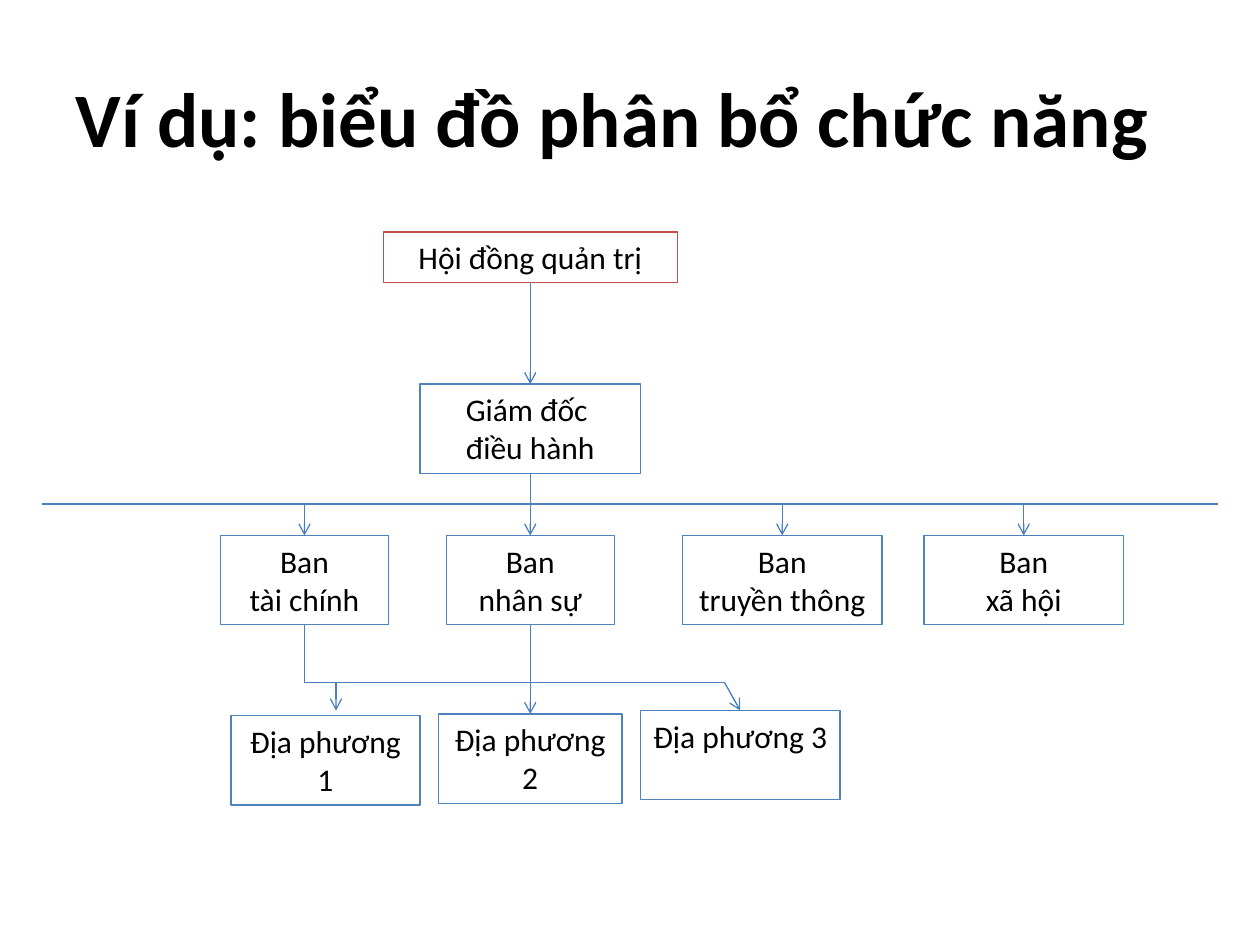
from pptx import Presentation
from pptx.dml.color import RGBColor
from pptx.enum import shapes, text
from pptx.oxml import ns
from pptx.util import Pt
from lxml import etree

FONT = "Calibri"
BLACK, BLUE, RED, LINE_BLUE = "000000", "4F81BD", "C0504D", "4B7EBC"
TOP, BOTTOM = 0, 2
BOX_HEIGHT = 51
DIVISION_TOP = 306
DIVISION_RAIL, LOCAL_RAIL = 288, 390


def color(value):
    return RGBColor.from_string(value)


def format_text(frame, size, alignment, bold=False):
    for paragraph in frame.paragraphs:
        paragraph.alignment = alignment
        for run in paragraph.runs:
            run.font.name = FONT
            run.font.size = Pt(size)
            run.font.bold = bold
            run.font.color.rgb = color(BLACK)


def set_title(slide, wording):
    title = slide.shapes.title
    title.left, title.top, title.width, title.height = Pt(36), Pt(21.6), Pt(648), Pt(90)
    title.text_frame.text = wording
    title.text_frame.vertical_anchor = text.MSO_ANCHOR.MIDDLE
    format_text(title.text_frame, 44, text.PP_ALIGN.LEFT, bold=True)


def add_box(slide, wording, center, top, width, height=BOX_HEIGHT, outline=BLUE):
    """Add an unfilled box centred on a horizontal position; \\v breaks a line."""
    box = slide.shapes.add_shape(shapes.MSO_SHAPE.RECTANGLE, Pt(center - width / 2),
                                 Pt(top), Pt(width), Pt(height))
    box.shadow.inherit = False
    box.fill.background()
    box.line.color.rgb = color(outline)
    box.line.width = Pt(0.75)
    frame = box.text_frame
    frame.word_wrap = True
    frame.vertical_anchor = text.MSO_ANCHOR.TOP
    frame.text = wording
    format_text(frame, 18, text.PP_ALIGN.CENTER)
    return box


def add_line(slide, start, end, arrow=False):
    """Draw a line; each end is an (x, y) point or a (box, side) pair to join."""
    points = [(0, 0) if hasattr(place[0], "shape_id") else place for place in (start, end)]
    (x1, y1), (x2, y2) = points
    line = slide.shapes.add_connector(shapes.MSO_CONNECTOR.STRAIGHT,
                                      Pt(x1), Pt(y1), Pt(x2), Pt(y2))
    if hasattr(start[0], "shape_id"):
        line.begin_connect(*start)
    if hasattr(end[0], "shape_id"):
        line.end_connect(*end)
    line.line.color.rgb = color(LINE_BLUE)
    line.line.width = Pt(0.75)
    if arrow:
        etree.SubElement(line.line._get_or_add_ln(), ns.qn("a:tailEnd"), type="arrow")
    etree.SubElement(line._element.spPr, ns.qn("a:effectLst"))


def main():
    presentation = Presentation()
    presentation.slide_width, presentation.slide_height = Pt(720), Pt(540)
    slide = presentation.slides.add_slide(presentation.slide_layouts[5])
    set_title(slide, "Ví dụ: biểu đồ phân bổ chức năng")

    board = add_box(slide, "Hội đồng quản trị", 303, 132.5, 168, 29, RED)
    director = add_box(slide, "Giám đốc \vđiều hành", 303, 219.5, 126)
    finance, personnel, media, social = [
        add_box(slide, f"Ban\v{name}", center, DIVISION_TOP, width)
        for name, center, width in (("tài chính", 174, 96), ("nhân sự", 303, 96),
                                    ("truyền thông", 447, 114), ("xã hội", 585, 114))]
    _, second_local, third_local = [
        add_box(slide, f"Địa phương {number}", center, top, width)
        for number, center, top, width in ((1, 186, 409, 108), (2, 303, 408, 105),
                                           (3, 423, 406, 114))]

    add_line(slide, (board, BOTTOM), (director, TOP), arrow=True)
    add_line(slide, (director, BOTTOM), (personnel, TOP), arrow=True)
    add_line(slide, (24, DIVISION_RAIL), (696, DIVISION_RAIL))
    for division, center in ((finance, 174), (media, 447), (social, 585)):
        add_line(slide, (center, DIVISION_RAIL), (division, TOP), arrow=True)

    add_line(slide, (finance, BOTTOM), (174, LOCAL_RAIL))
    add_line(slide, (174, LOCAL_RAIL), (414, LOCAL_RAIL))
    add_line(slide, (192, LOCAL_RAIL), (192, 406), arrow=True)
    add_line(slide, (personnel, BOTTOM), (second_local, TOP), arrow=True)
    add_line(slide, (414, LOCAL_RAIL), (third_local, TOP), arrow=True)

    presentation.save("out.pptx")


if __name__ == "__main__":
    main()
